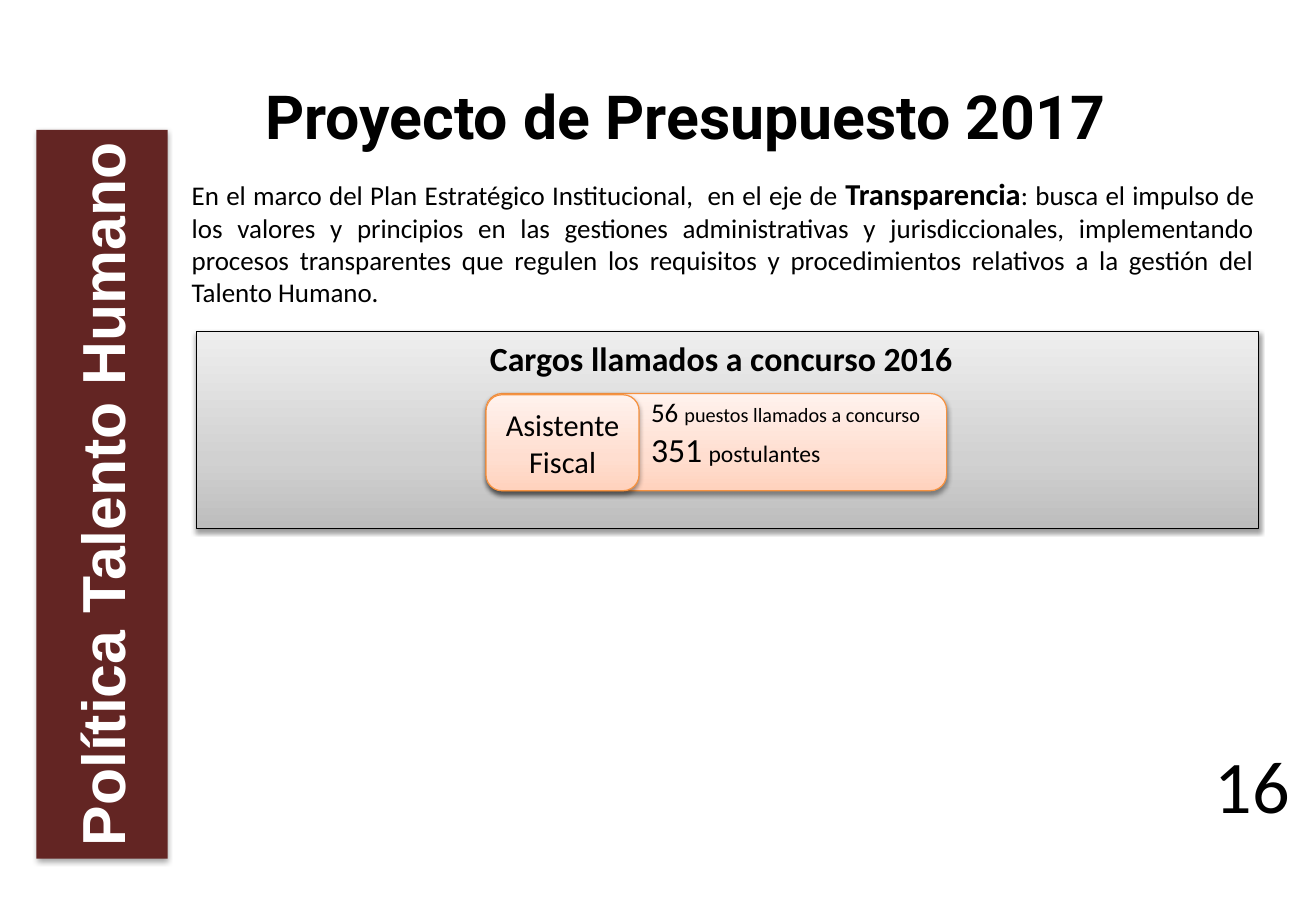
from lxml import etree
from pptx import Presentation
from pptx.dml.color import RGBColor
from pptx.enum.shapes import MSO_SHAPE
from pptx.enum.text import MSO_ANCHOR, PP_ALIGN
from pptx.oxml.ns import qn
from pptx.util import Inches, Pt

RECT, ROUNDED = MSO_SHAPE.RECTANGLE, MSO_SHAPE.ROUNDED_RECTANGLE
LEFT, CENTER, RIGHT, JUSTIFY = (PP_ALIGN.LEFT, PP_ALIGN.CENTER,
                                PP_ALIGN.RIGHT, PP_ALIGN.JUSTIFY)
TOP, MIDDLE = MSO_ANCHOR.TOP, MSO_ANCHOR.MIDDLE

MAROON, BLACK, WHITE, ORANGE = "632523", "000000", "FFFFFF", "F69240"
GRAYS = [(0, "BDBDBD"), (35, "D1D1D1"), (100, "EEEEEE")]
PEACHES = [(0, "FFD2BD"), (35, "FFDED0"), (100, "FFF2ED")]


def rgb(color):
    return RGBColor.from_string(color)


class SlideBuilder:
    font = "Calibri"

    def __init__(self, slide):
        self.s = slide

    def box(self, at, kind=RECT, fill=None, stops=None, line=None,
            shadow=None):
        sp = self.s.shapes.add_shape(kind, *map(Inches, at))
        sp.shadow.inherit = False
        if stops:
            self.gradient(sp, stops)
        elif fill:
            sp.fill.solid()
            sp.fill.fore_color.rgb = rgb(fill)
        else:
            sp.fill.background()
        if line:
            sp.line.color.rgb = rgb(line)
            sp.line.width = Pt(0.75)
        else:
            sp.line.fill.background()
        if shadow:
            self.drop_shadow(sp, *shadow)
        return sp

    def gradient(self, sp, stops):
        sp.fill.gradient()
        sp.fill.gradient_angle = 90
        stop_list = sp._element.spPr.find(qn("a:gradFill")).find(qn("a:gsLst"))
        for old in list(stop_list):
            stop_list.remove(old)
        for position, color in stops:
            gs = etree.SubElement(stop_list, qn("a:gs"), pos=str(position * 1000))
            etree.SubElement(gs, qn("a:srgbClr"), val=color)

    def drop_shadow(self, sp, opacity, distance):
        effects = sp._element.spPr.find(qn("a:effectLst"))
        outer = etree.SubElement(
            effects, qn("a:outerShdw"), blurRad=str(Pt(3.1)),
            dist=str(Pt(distance)), dir="5400000", rotWithShape="0")
        color = etree.SubElement(outer, qn("a:srgbClr"), val=BLACK)
        etree.SubElement(color, qn("a:alpha"), val=str(opacity * 1000))

    def add_text(self, sp, paragraphs, align=LEFT, anchor=TOP, font=None,
                 color=BLACK):
        """Each paragraph is a list of (text, size, bold) runs."""
        tf = sp.text_frame
        tf.word_wrap = True
        tf.vertical_anchor = anchor
        for i, runs in enumerate(paragraphs):
            p = tf.add_paragraph() if i else tf.paragraphs[0]
            p.alignment = align
            for text, size, bold in runs:
                r = p.add_run()
                r.text = text
                r.font.name = font or self.font
                r.font.size = Pt(size)
                r.font.bold = bold
                r.font.color.rgb = rgb(color)

    def text_box(self, at, paragraphs, **style):
        self.add_text(self.s.shapes.add_textbox(*map(Inches, at)),
                      paragraphs, **style)


def main():
    prs = Presentation()
    prs.slide_width, prs.slide_height = Inches(10.83), Inches(7.5)
    b = SlideBuilder(prs.slides.add_slide(prs.slide_layouts[6]))
    soft = (38, 1.6)

    # Vertical section banner
    banner = b.box((0.3, 1.07, 1.08, 6), fill=MAROON, shadow=(35, 1.8))
    banner.text_frame.margin_left = Inches(0.23)
    banner.text_frame._txBody.bodyPr.set("vert", "vert270")
    b.add_text(banner, [[("Política Talento Humano", 36, True)]],
               align=CENTER, font="Arial", color=WHITE)

    # Title
    b.text_box((1.38, 0.6, 8.52, 0.71),
               [[("Proyecto de Presupuesto 2017", 36, True)]],
               align=CENTER, font="Roboto")

    # Introduction
    b.text_box((1.48, 1.39, 8.94, 1.21), [[
        ("En el marco del Plan Estratégico Institucional,  en el eje de ",
         16, False),
        ("Transparencia", 18, True),
        (": busca el impulso de los valores y principios en las gestiones "
         "administrativas y jurisdiccionales, implementando procesos "
         "transparentes que regulen los requisitos y procedimientos "
         "relativos a la gestión del Talento Humano.", 16, False),
    ]], align=JUSTIFY)

    # Panel of posts open to competition
    b.box((1.62, 2.73, 8.74, 1.62), stops=GRAYS, line=BLACK, shadow=soft)
    b.text_box((2.19, 2.73, 7.49, 0.44),
               [[("Cargos llamados a concurso 2016", 20, True)]],
               align=CENTER)

    # Post card: name on the left, figures on the right
    b.box((4, 3.24, 3.79, 0.8), ROUNDED, stops=PEACHES, line=ORANGE,
          shadow=soft)
    post = b.box((4, 3.25, 1.26, 0.79), ROUNDED, stops=PEACHES, line=ORANGE,
                 shadow=soft)
    b.add_text(post, [[("Asistente Fiscal", 18, False)]],
               align=CENTER, anchor=MIDDLE)
    b.text_box((5.26, 3.21, 2.53, 0.71), [
        [("56 ", 16, False), ("puestos llamados a concurso", 12, False)],
        [("351", 20, False), (" ", 16, False), ("postulantes", 14, False)],
    ])

    # Page number
    number = b.box((9.68, 6.11, 1.07, 0.68), ROUNDED)
    b.add_text(number, [[("16", 44, False)]], align=RIGHT, anchor=MIDDLE)

    prs.save("out.pptx")


if __name__ == "__main__":
    main()
